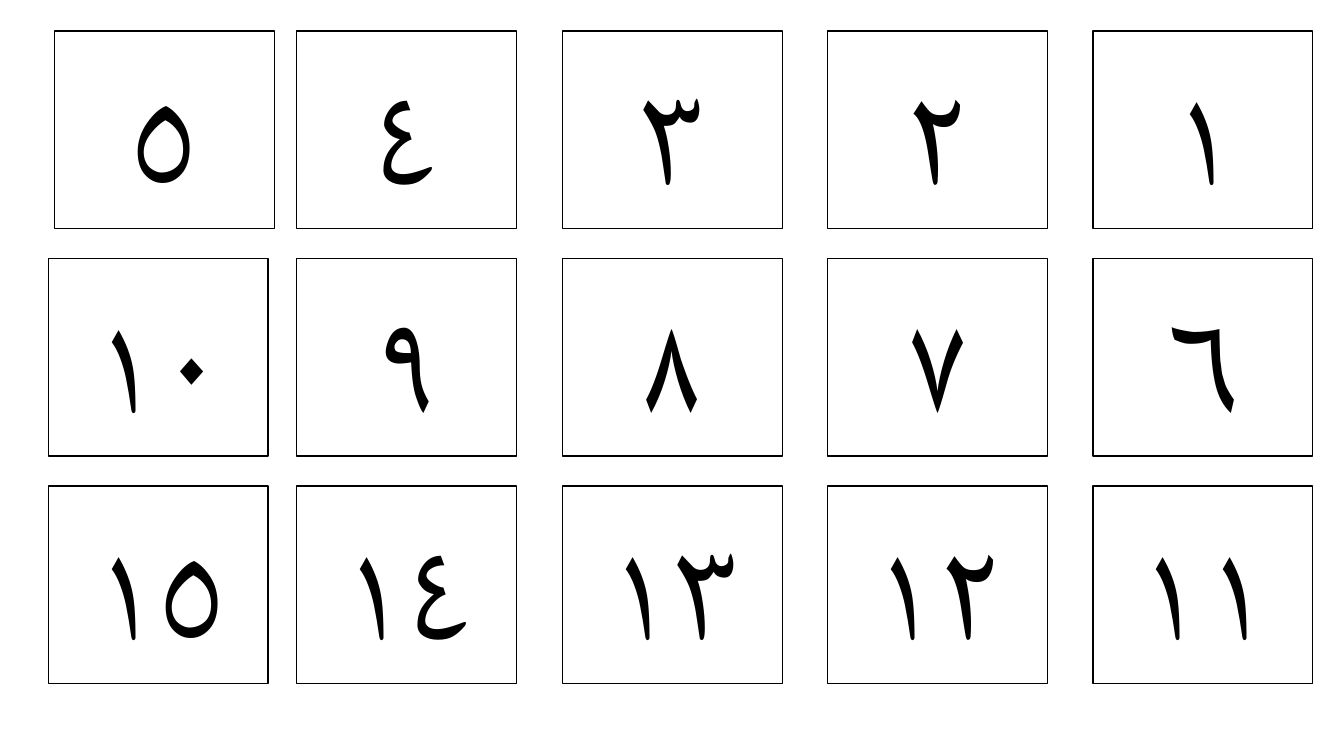
from dataclasses import dataclass

from lxml import etree
from pptx import Presentation
from pptx import util as u
from pptx.dml import color
from pptx.enum import shapes, text
from pptx.oxml import ns


@dataclass(frozen=True)
class Theme:
    ink: color.RGBColor = color.RGBColor(0, 0, 0)
    font: str = "Calibri"
    numeral: u.Pt = u.Pt(96)
    border: u.Pt = u.Pt(1)


THEME = Theme()
ROWS = [
    ["١", "٢", "٣", "٤", "٥"],
    ["٦", "٧", "٨", "٩", "١٠"],
    ["١١", "١٢", "١٣", "١٤", "١٥"],
]
COLUMN_LEFTS = [10.84, 8.21, 5.58, 2.94, 0.48]
FIRST_ROW_LEFTS = COLUMN_LEFTS[:-1] + [0.54]
TOP, ROW_STEP = 0.31, 2.255
CARD_WIDTH, CARD_HEIGHT = 2.18, 1.96


def add_numeral(p, numeral):
    p.alignment = text.PP_ALIGN.CENTER
    p._p.get_or_add_pPr().set("rtl", "1")
    r = p.add_run()
    r.text = numeral
    r.font.size = THEME.numeral
    r.font.name = THEME.font
    r.font.color.rgb = THEME.ink
    cs = etree.SubElement(r._r.get_or_add_rPr(), ns.qn("a:cs"))
    cs.set("typeface", THEME.font)


def add_card(s, left, top, numeral):
    sp = s.shapes.add_shape(
        shapes.MSO_SHAPE.RECTANGLE,
        u.Inches(left), u.Inches(top),
        u.Inches(CARD_WIDTH), u.Inches(CARD_HEIGHT),
    )
    sp.shadow.inherit = False
    sp.fill.background()
    sp.line.color.rgb = THEME.ink
    sp.line.width = THEME.border
    tf = sp.text_frame
    tf.word_wrap = True
    tf.vertical_anchor = text.MSO_ANCHOR.MIDDLE
    add_numeral(tf.paragraphs[0], numeral)


def main():
    prs = Presentation()
    prs.slide_width = u.Inches(13.33)
    prs.slide_height = u.Inches(7.5)
    s = prs.slides.add_slide(prs.slide_layouts[6])
    for row, numerals in enumerate(ROWS):
        lefts = COLUMN_LEFTS if row else FIRST_ROW_LEFTS
        for left, numeral in zip(lefts, numerals):
            add_card(s, left, TOP + row * ROW_STEP, numeral)
    prs.save("out.pptx")


if __name__ == "__main__":
    main()
